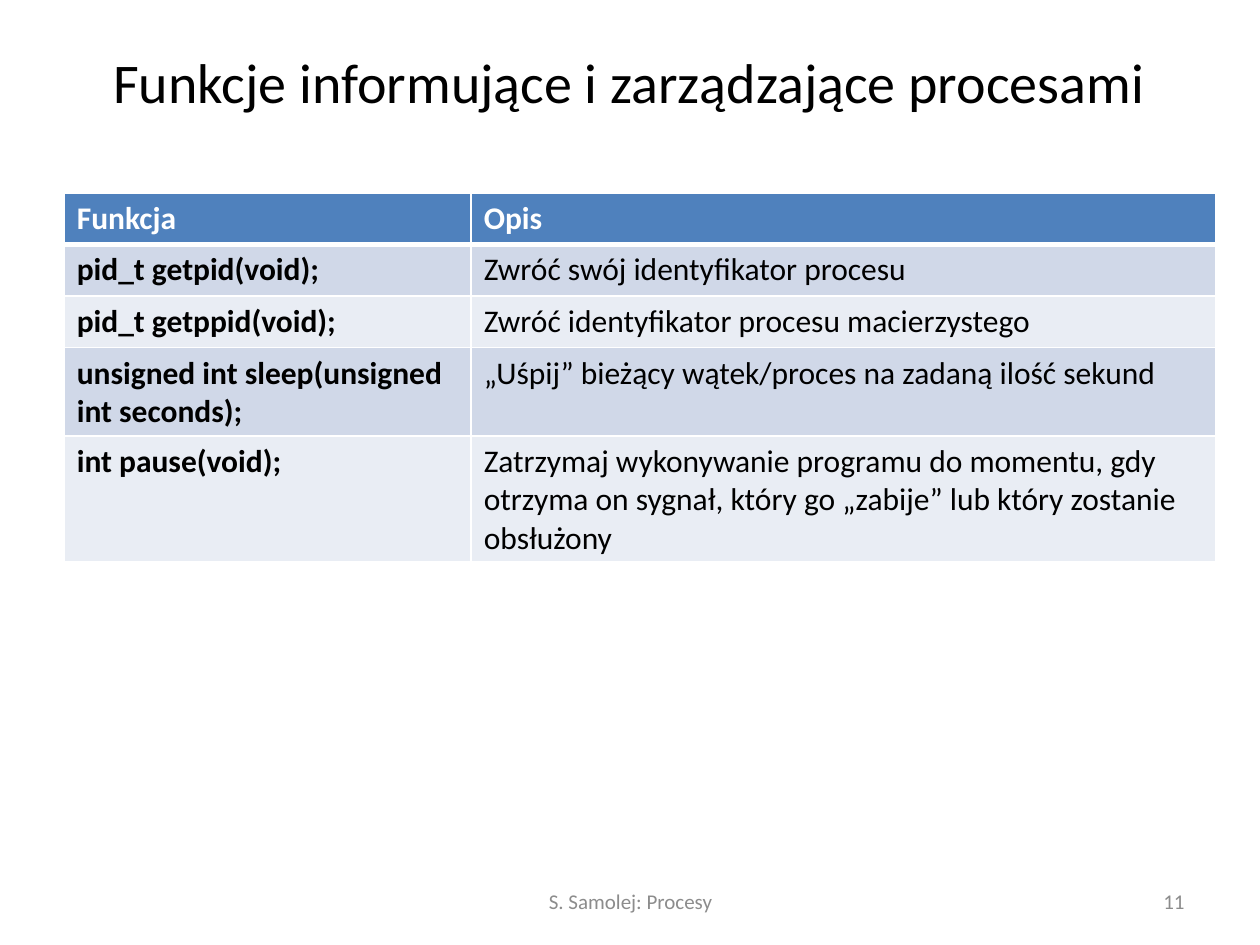
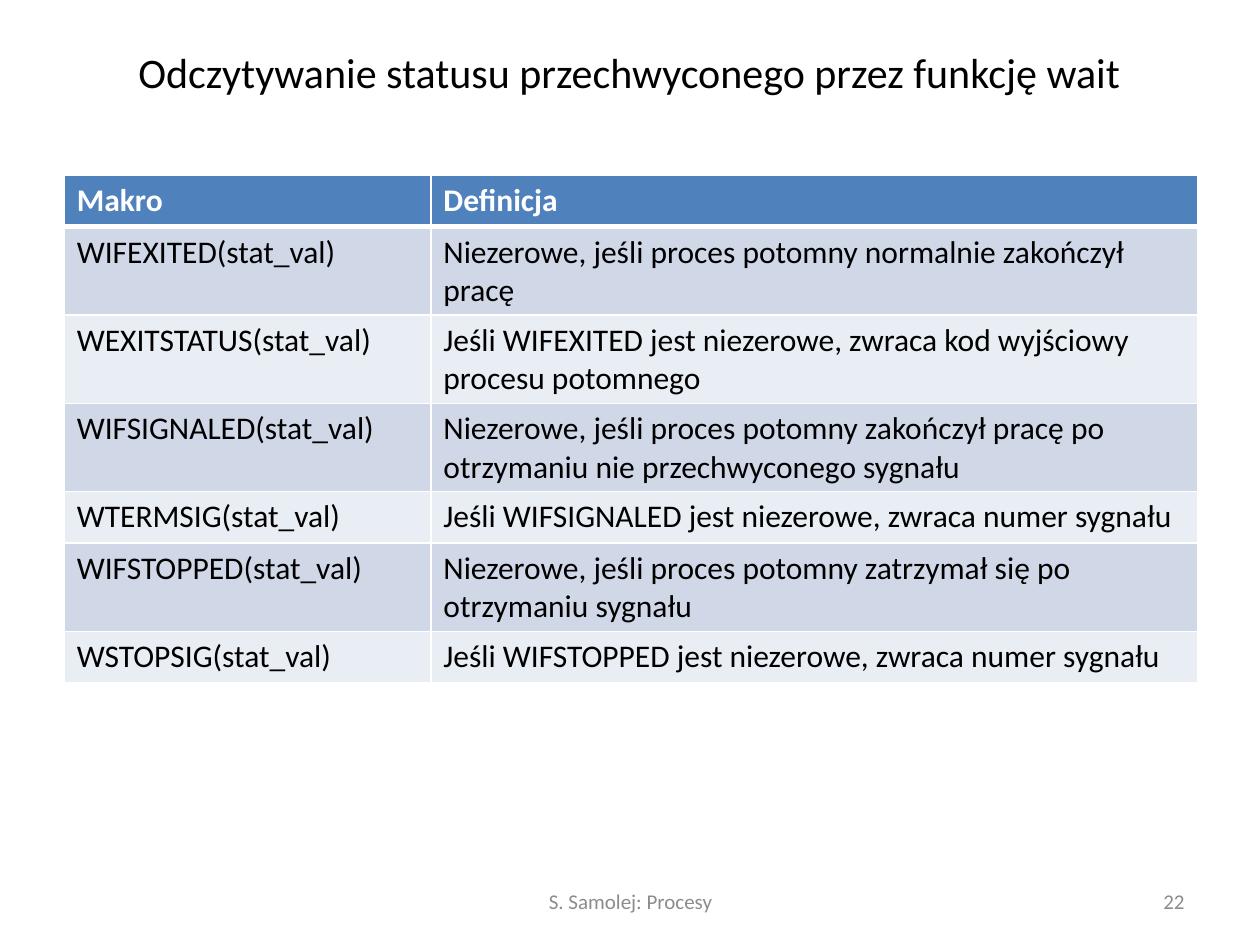
"""Builds two slides of function and macro tables about processes."""
from dataclasses import dataclass

from lxml.etree import SubElement
from pptx import Presentation
from pptx.dml.color import RGBColor
from pptx.enum.text import MSO_ANCHOR as Anchor, PP_ALIGN as Align
from pptx.oxml.ns import qn
from pptx.slide import Slide
from pptx.table import _Cell as Cell
from pptx.text.text import _Paragraph as Paragraph
from pptx.util import Inches, Pt


@dataclass(frozen=True)
class Theme:
    font: str = "Calibri"
    ink: str = "000000"
    header_ink: str = "FFFFFF"
    footer_ink: str = "8C8C8C"
    header_fill: str = "4F81BD"
    bands: tuple[str, str] = ("D0D8E8", "E9EDF4")
    grid: str = "FFFFFF"
    grid_width: float = 1
    header_rule: float = 3
    cell_size: int = 18
    footer_size: int = 12


@dataclass(frozen=True)
class Box:
    left: float
    top: float
    width: float
    height: float


@dataclass(frozen=True)
class TextStyle:
    size: int
    color: str
    align: Align = Align.LEFT
    bold: bool = False


@dataclass(frozen=True)
class Topic:
    title: str
    title_size: int
    title_height: float
    number: int
    table_top: float
    columns: tuple[float, float]
    bold_terms: bool
    header: tuple[str, str]
    entries: tuple[tuple[str, str], ...]


THEME = Theme()
MARGIN, TITLE_TOP, TITLE_WIDTH = 0.5, 0.3, 8.99
TABLE_LEFT, ROW_HEIGHT = 0.51, 0.41
FOOTER = "S. Samolej: Procesy"
FOOTER_BOX = Box(3.42, 6.95, 3.17, 0.4)
NUMBER_BOX = Box(7.17, 6.95, 2.33, 0.4)

TOPICS = (
    Topic(
        "Funkcje informujące i zarządzające procesami", 32, 0.69, 11,
        1.53, (3.23, 5.91), True, ("Funkcja", "Opis"),
        (
            ("pid_t getpid(void);", "Zwróć swój identyfikator procesu"),
            ("pid_t getppid(void);", "Zwróć identyfikator procesu macierzystego"),
            ("unsigned int sleep(unsigned int seconds);",
             "„Uśpij” bieżący wątek/proces na zadaną ilość sekund"),
            ("int pause(void);",
             "Zatrzymaj wykonywanie programu do momentu, gdy otrzyma on sygnał, "
             "który go „zabije” lub który zostanie obsłużony"),
        ),
    ),
    Topic(
        "Odczytywanie statusu przechwyconego przez funkcję wait", 24, 0.54, 22,
        1.39, (2.91, 6.09), False, ("Makro", "Definicja"),
        (
            ("WIFEXITED(stat_val)",
             "Niezerowe, jeśli proces potomny normalnie zakończył pracę"),
            ("WEXITSTATUS(stat_val)",
             "Jeśli WIFEXITED jest niezerowe, zwraca kod wyjściowy procesu potomnego"),
            ("WIFSIGNALED(stat_val)",
             "Niezerowe, jeśli proces potomny zakończył pracę po otrzymaniu "
             "nie przechwyconego sygnału"),
            ("WTERMSIG(stat_val)",
             "Jeśli WIFSIGNALED jest niezerowe, zwraca numer sygnału"),
            ("WIFSTOPPED(stat_val)",
             "Niezerowe, jeśli proces potomny zatrzymał się po otrzymaniu sygnału"),
            ("WSTOPSIG(stat_val)",
             "Jeśli WIFSTOPPED jest niezerowe, zwraca numer sygnału"),
        ),
    ),
)


def write(paragraph: Paragraph, text: str, style: TextStyle) -> None:
    paragraph.alignment = style.align
    run = paragraph.add_run()
    run.text = text
    run.font.name = THEME.font
    run.font.size = Pt(style.size)
    run.font.bold = style.bold
    run.font.color.rgb = RGBColor.from_string(style.color)


def add_text(slide: Slide, box: Box, text: str, style: TextStyle) -> None:
    frame = slide.shapes.add_textbox(
        Inches(box.left), Inches(box.top), Inches(box.width), Inches(box.height)
    ).text_frame
    frame.word_wrap = True
    frame.vertical_anchor = Anchor.MIDDLE
    write(frame.paragraphs[0], text, style)


def add_borders(cell: Cell, top: float, bottom: float) -> None:
    properties = cell._tc.get_or_add_tcPr()
    widths = {"L": THEME.grid_width, "R": THEME.grid_width, "T": top, "B": bottom}
    for position, (side, width) in enumerate(widths.items()):
        line = SubElement(properties, qn(f"a:ln{side}"), w=str(Pt(width)))
        fill = SubElement(line, qn("a:solidFill"))
        SubElement(fill, qn("a:srgbClr"), val=THEME.grid)
        properties.insert(position, line)


def fill_cell(cell: Cell, row: int, text: str, bold: bool) -> None:
    is_header = row == 0
    fill = THEME.header_fill if is_header else THEME.bands[(row - 1) % 2]
    ink = THEME.header_ink if is_header else THEME.ink
    cell.fill.solid()
    cell.fill.fore_color.rgb = RGBColor.from_string(fill)
    add_borders(
        cell,
        top=THEME.header_rule if row == 1 else THEME.grid_width,
        bottom=THEME.header_rule if is_header else THEME.grid_width,
    )
    write(cell.text_frame.paragraphs[0], text,
          TextStyle(THEME.cell_size, ink, bold=bold))


def add_definitions(slide: Slide, topic: Topic) -> None:
    rows = (topic.header, *topic.entries)
    table = slide.shapes.add_table(
        len(rows), len(topic.columns), Inches(TABLE_LEFT), Inches(topic.table_top),
        Inches(sum(topic.columns)), Inches(ROW_HEIGHT * len(rows)),
    ).table
    for column, width in zip(table.columns, topic.columns):
        column.width = Inches(width)
    for row, texts in enumerate(rows):
        for column, text in enumerate(texts):
            bold = row == 0 or (column == 0 and topic.bold_terms)
            fill_cell(table.cell(row, column), row, text, bold)


def add_topic(deck: Presentation, topic: Topic) -> None:
    slide = deck.slides.add_slide(deck.slide_layouts[6])
    title_box = Box(MARGIN, TITLE_TOP, TITLE_WIDTH, topic.title_height)
    add_text(slide, title_box, topic.title,
             TextStyle(topic.title_size, THEME.ink, Align.CENTER))
    add_definitions(slide, topic)
    add_text(slide, FOOTER_BOX, FOOTER,
             TextStyle(THEME.footer_size, THEME.footer_ink, Align.CENTER))
    add_text(slide, NUMBER_BOX, str(topic.number),
             TextStyle(THEME.footer_size, THEME.footer_ink, Align.RIGHT))


def main() -> None:
    deck = Presentation()
    deck.slide_width, deck.slide_height = Inches(10), Inches(7.5)
    for topic in TOPICS:
        add_topic(deck, topic)
    deck.save("out.pptx")


if __name__ == "__main__":
    main()
